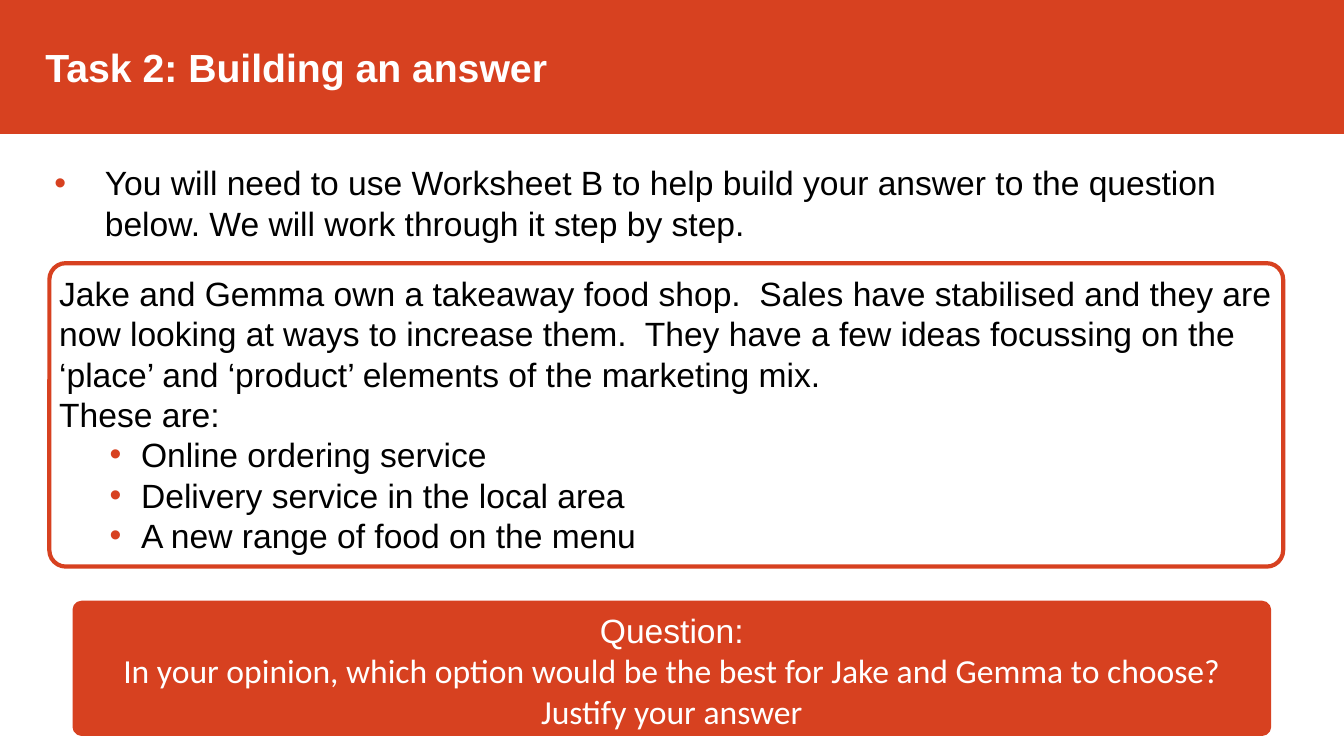
from lxml import etree
from pptx import Presentation
from pptx.dml.color import RGBColor
from pptx.enum.shapes import MSO_SHAPE
from pptx.enum.text import MSO_ANCHOR, MSO_AUTO_SIZE, PP_ALIGN
from pptx.oxml.ns import qn
from pptx.util import Pt

RECTANGLE = MSO_SHAPE.RECTANGLE
ROUNDED = MSO_SHAPE.ROUNDED_RECTANGLE
TOP, MIDDLE = MSO_ANCHOR.TOP, MSO_ANCHOR.MIDDLE
LEFT, CENTER = PP_ALIGN.LEFT, PP_ALIGN.CENTER
NO_FIT = MSO_AUTO_SIZE.NONE

COLOURS = {"accent": "D74120", "ink": "000000", "paper": "FFFFFF"}


class SlideBuilder:
    font = "Arial"
    size = 24
    inset = 3.6
    corner = 0.054

    def __init__(self, deck):
        self.page = deck.slides.add_slide(deck.slide_layouts[1])

    def colour(self, name):
        return RGBColor.from_string(COLOURS[name])

    def shape(self, kind, left, top, width, height, fill=None, line_width=3):
        box = self.page.shapes.add_shape(kind, Pt(left), Pt(top), Pt(width), Pt(height))
        box.shadow.inherit = False
        if fill:
            box.fill.solid()
            box.fill.fore_color.rgb = self.colour(fill)
        else:
            box.fill.background()
        box.line.color.rgb = self.colour("accent")
        box.line.width = Pt(line_width)
        if kind == ROUNDED:
            box.adjustments[0] = self.corner
        return box

    def banner(self, height):
        box = self.shape(RECTANGLE, 0, 0, 960, height, "accent", 1)
        self.page.shapes.element.insert(2, box._element)

    def placeholder(self, index, left, top, width, height, anchor=TOP):
        box = self.page.placeholders[index]
        box.left, box.top, box.width, box.height = Pt(left), Pt(top), Pt(width), Pt(height)
        self.frame(box, anchor)
        return box

    def frame(self, box, anchor=TOP):
        frame = box.text_frame
        frame.word_wrap = True
        frame.auto_size = NO_FIT
        frame.vertical_anchor = anchor
        frame.margin_left = frame.margin_right = Pt(self.inset)
        frame.margin_top = frame.margin_bottom = Pt(self.inset)

    def paragraph(self, box, text, colour="ink", align=LEFT, font=None, size=None,
                  bold=False, margin=0, indent=0, before=0, bullet=False, level=0):
        frame = box.text_frame
        para = frame.add_paragraph() if frame.text else frame.paragraphs[0]
        para.text = text
        para.alignment = align
        para.level = level
        para.space_before = Pt(before)
        properties = para._p.get_or_add_pPr()
        properties.set("marL", str(Pt(margin)))
        properties.set("indent", str(Pt(indent)))
        if bullet:
            bullet_colour = etree.SubElement(properties, qn("a:buClr"))
            etree.SubElement(bullet_colour, qn("a:srgbClr"), val=COLOURS["accent"])
            etree.SubElement(properties, qn("a:buFont"), typeface=self.font)
            etree.SubElement(properties, qn("a:buChar"), char="•")
        para.font.name = font or self.font
        para.font.size = Pt(size or self.size)
        para.font.bold = bold
        para.font.color.rgb = self.colour(colour)


def main():
    deck = Presentation()
    deck.slide_width, deck.slide_height = Pt(960), Pt(540)
    slide = SlideBuilder(deck)

    slide.banner(95)
    title = slide.placeholder(0, 0, 29, 960, 38, MIDDLE)
    slide.paragraph(title, "Task 2: Building an answer", "paper", size=28, bold=True, indent=28.8)

    instruction = slide.placeholder(1, 35.3, 112.3, 907, 62.6)
    slide.paragraph(
        instruction,
        "You will need to use Worksheet B to help build your answer to the question below. "
        "We will work through it step by step.",
        margin=36, indent=-36, before=12, bullet=True)

    scenario = slide.shape(ROUNDED, 35.3, 188, 881.3, 216.7)
    slide.frame(scenario)
    slide.paragraph(
        scenario,
        "Jake and Gemma own a takeaway food shop.  Sales have stabilised and they are now "
        "looking at ways to increase them.  They have a few ideas focussing on the ‘place’ "
        "and ‘product’ elements of the marketing mix.")
    slide.paragraph(scenario, "These are:")
    for idea in ("Online ordering service", "Delivery service in the local area",
                 "A new range of food on the menu"):
        slide.paragraph(scenario, idea, margin=58.5, indent=-22.5, bullet=True, level=1)

    question = slide.shape(ROUNDED, 53.3, 430.6, 853.2, 93.6, "accent")
    slide.frame(question)
    slide.paragraph(question, "Question:", "paper", CENTER)
    slide.paragraph(
        question,
        "In your opinion, which option would be the best for Jake and Gemma to choose? "
        "Justify your answer",
        "paper", CENTER, font="Calibri")

    deck.save("out.pptx")


if __name__ == "__main__":
    main()
